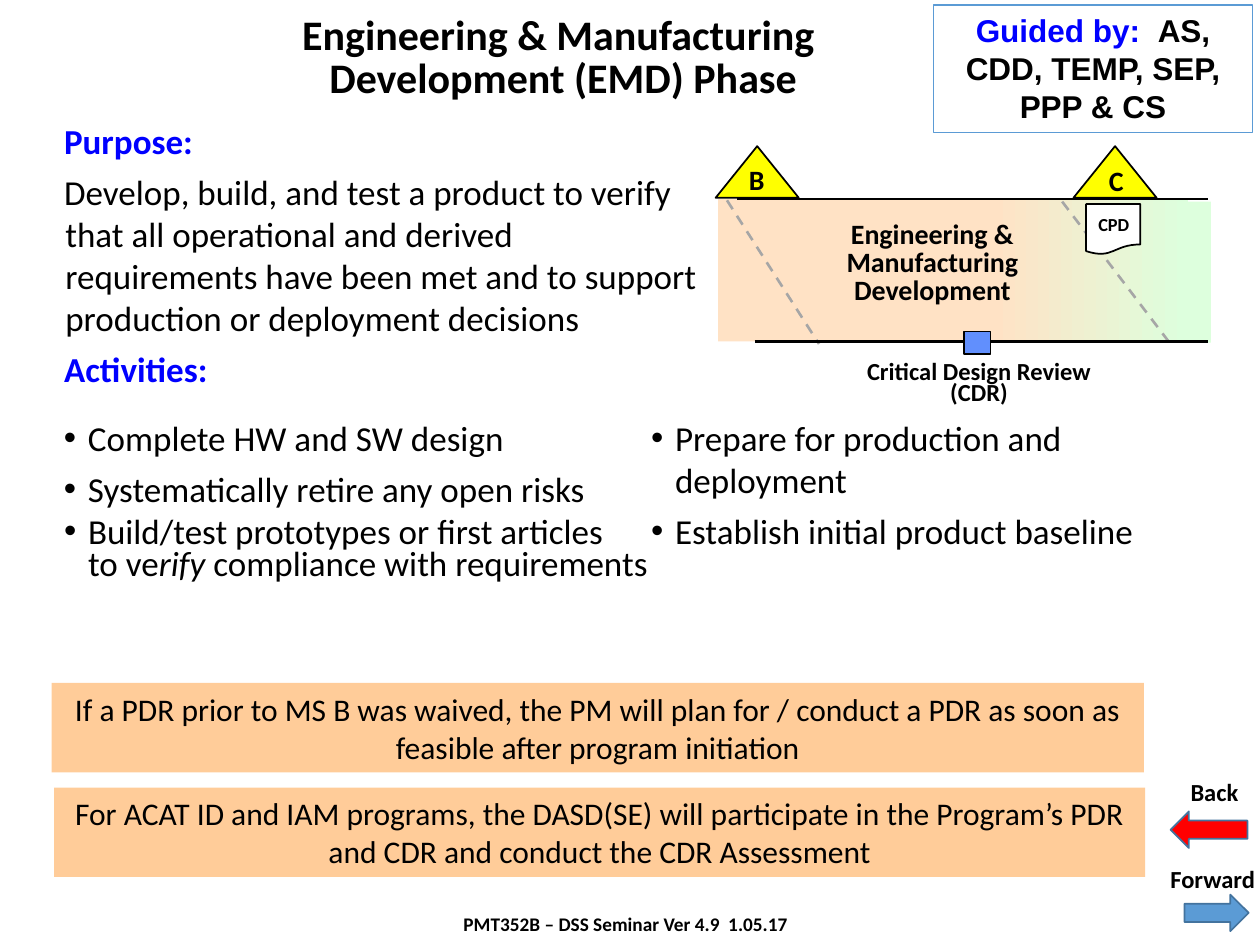
from dataclasses import dataclass
from typing import NamedTuple

from lxml import etree
from pptx import Presentation
from pptx.dml.color import RGBColor
from pptx.enum.dml import MSO_LINE
from pptx.enum.shapes import MSO_CONNECTOR, MSO_SHAPE
from pptx.enum.text import MSO_ANCHOR, MSO_AUTO_SIZE, PP_ALIGN
from pptx.oxml.ns import qn
from pptx.util import Inches, Pt

RECT, TRIANGLE = MSO_SHAPE.RECTANGLE, MSO_SHAPE.ISOSCELES_TRIANGLE
ARROW, DOCUMENT = MSO_SHAPE.RIGHT_ARROW, MSO_SHAPE.FLOWCHART_DOCUMENT
STRAIGHT, DASH = MSO_CONNECTOR.STRAIGHT, MSO_LINE.DASH
LEFT, CENTER = PP_ALIGN.LEFT, PP_ALIGN.CENTER
TOP, MIDDLE = MSO_ANCHOR.TOP, MSO_ANCHOR.MIDDLE
COLS, ROWS = 100, 75  # grid of tenth-inch cells


@dataclass(frozen=True)
class Theme:
    font: str = "Calibri"
    guide_font: str = "Arial"
    black: str = "000000"
    white: str = "FFFFFF"
    heading: str = "0000FF"
    note: str = "FFCC99"
    phase: str = "FFE2C5"
    next_phase: str = "DDFFDD"
    milestone: str = "FFFF00"
    review: str = "618FFD"
    dash: str = "A6A6A6"
    accent: str = "5B9BD5"
    accent_line: str = "43739E"
    back: str = "FF0000"
    title: float = 24
    body: float = 20
    callout: float = 18
    label: float = 16
    small: float = 14
    footer: float = 11
    tiny: float = 10.5


class Box(NamedTuple):
    col: float
    row: float
    cols: float
    rows: float


class Run(NamedTuple):
    text: str
    color: str = "000000"
    bold: bool = False
    italic: bool = False


class Para(NamedTuple):
    runs: list[Run]
    margin: float = 0  # grid columns
    indent: float = 0
    before: float = 0  # points
    spacing: float | None = None  # share of a line, or Pt
    bullet: bool = False


T = Theme()
prs = Presentation()
prs.slide_width, prs.slide_height = Inches(COLS / 10), Inches(ROWS / 10)
s = prs.slides.add_slide(prs.slide_layouts[6])


def grid(*cells: float) -> list[int]:
    return [Inches(c / 10) for c in cells]


def rgb(color: str) -> RGBColor:
    return RGBColor.from_string(color)


def write(sp, paras: list[Para], *, size: float, font: str = T.font, align=CENTER,
          wrap: bool = True, anchor=TOP, inset: bool = True) -> None:
    tf = sp.text_frame
    tf.word_wrap, tf.vertical_anchor = wrap, anchor
    tf.auto_size = MSO_AUTO_SIZE.SHAPE_TO_FIT_TEXT
    if not inset:
        tf.margin_left = tf.margin_right = tf.margin_top = tf.margin_bottom = 0
    for i, para in enumerate(paras):
        p = tf.add_paragraph() if i else tf.paragraphs[0]
        p.alignment, p.space_before = align, Pt(para.before)
        if para.spacing:
            p.line_spacing = para.spacing
        pPr = p._p.get_or_add_pPr()
        margin, indent = grid(para.margin, para.indent)
        pPr.set("marL", str(margin))
        pPr.set("indent", str(indent))
        if para.bullet:
            etree.SubElement(pPr, qn("a:buFont"), typeface="Arial")
            etree.SubElement(pPr, qn("a:buChar"), char="•")
        for run in para.runs:
            r = p.add_run()
            r.text = run.text
            r.font.name, r.font.size = font, Pt(size)
            r.font.bold, r.font.italic = run.bold, run.italic
            r.font.color.rgb = rgb(run.color)


def add_text(box: Box, paras: list[Para], **fmt) -> None:
    write(s.shapes.add_textbox(*grid(*box)), paras, **fmt)


def add_label(box: Box, text: str, size: float, *, spacing=None, **fmt) -> None:
    add_text(box, [Para([Run(text, bold=True)], spacing=spacing)], size=size, **fmt)


def add_shape(kind, box: Box, fill: str | None = None, line: str | None = None,
              width: float = 1, rotation: float = 0):
    sp = s.shapes.add_shape(kind, *grid(*box))
    sp.shadow.inherit = False
    sp.rotation = rotation
    if fill:
        sp.fill.solid()
        sp.fill.fore_color.rgb = rgb(fill)
    else:
        sp.fill.background()
    if line:
        sp.line.color.rgb, sp.line.width = rgb(line), Pt(width)
    else:
        sp.line.fill.background()
    return sp


def add_line(x1: float, y1: float, x2: float, y2: float, color: str, dash=None) -> None:
    ln = s.shapes.add_connector(STRAIGHT, *grid(x1, y1, x2, y2))
    ln.line.color.rgb, ln.line.width = rgb(color), Pt(1.5)
    if dash:
        ln.line.dash_style = dash
    etree.SubElement(ln._element.spPr, qn("a:effectLst"))


def bullet(text: str, before: float = 5, spacing=None) -> Para:
    return Para([Run(text)], 3.1, -1.9, before, spacing, True)


def heading(text: str) -> Para:
    return Para([Run(text, T.heading, True)], 1.3, -0.1, 5)


# Title and purpose
add_text(Box(22.8, 0.8, 43.8, 7.9),
         [Para([Run(t, bold=True)], spacing=0.85)
          for t in ("Engineering & Manufacturing ", "Development (EMD) Phase")],
         size=T.title, wrap=False)
purpose = ("Develop, build, and test a product to verify that all operational and derived "
           "requirements have been met and to support production or deployment decisions")
add_text(Box(2.9, 9, 53.9, 22.9),
         [heading("Purpose:"), Para([Run(purpose)], 1.3, -0.1, 5), heading("Activities:")],
         size=T.body, align=LEFT)

# Activities
verify = [Run("to ve"), Run("rify", italic=True), Run(" compliance with requirements")]
activities = [
    (Box(2.9, 32.6, 46.3, 11.9), [bullet("Complete HW and SW design"),
                                  bullet("Systematically retire any open risks")]),
    (Box(49.5, 32.6, 49.7, 11.9), [bullet("Prepare for production and deployment"),
                                   bullet("Establish initial product baseline")]),
    (Box(2.9, 40.8, 50.5, 6.1), [bullet("Build/test prototypes or first articles", 0, Pt(18)),
                                 Para(verify, 3.1, spacing=Pt(18))]),
]
for box, paras in activities:
    add_text(box, paras, size=T.body, align=LEFT)

# Notes
notes = [
    (Box(4.1, 54.2, 86.7, 7.1), "If a PDR prior to MS B was waived, the PM will plan for / "
                                "conduct a PDR as soon as feasible after program initiation"),
    (Box(4.3, 62.5, 86.6, 7.1), "For ACAT ID and IAM programs, the DASD(SE) will participate in "
                                "the Program’s PDR and CDR and conduct the CDR Assessment"),
]
for box, text in notes:
    write(add_shape(RECT, box, T.note), [Para([Run(text)])], size=T.callout, anchor=MIDDLE)

# Phase band, fading into the next phase
add_shape(RECT, Box(57, 15.8, 24.4, 11.3), T.phase)
add_shape(RECT, Box(78.9, 16, 17.2, 11.2), T.next_phase)
fade = add_shape(RECT, Box(78.7, 15.9, 15.6, 11.3)).fill
fade.gradient()
fade.gradient_angle = 0
for stop, color in zip(fade.gradient_stops, (T.phase, T.next_phase)):
    stop.color.rgb = rgb(color)
add_line(57.7, 15.9, 65, 27.3, T.dash, DASH)
add_line(84.3, 16, 92.9, 27.3, T.dash, DASH)
add_label(Box(63.3, 17.6, 21.4, 7.6), "Engineering & Manufacturing Development", T.label,
          spacing=Pt(16), inset=False)
add_line(59.9, 27.1, 95.9, 27.1, T.black)
add_line(58.5, 15.8, 95.9, 15.8, T.black)

# Milestones, design review and document
for col, letter, box in (56.8, "B", Box(58.4, 12.4, 3.3, 3.7)), (85.2, "C", Box(87, 12.5, 3.2, 3.7)):
    add_shape(TRIANGLE, Box(col, 11.6, 6.6, 4.1), T.milestone, T.black)
    add_label(box, letter, T.label, wrap=False)
add_label(Box(67.3, 28.4, 20.8, 4.4), "Critical Design Review (CDR)", T.small, spacing=Pt(12))
add_shape(RECT, Box(76.5, 26.3, 2.1, 1.8), T.review, T.black, 0.75)
add_shape(DOCUMENT, Box(86.2, 16.2, 4.3, 4), T.white, T.black)
add_label(Box(85.4, 16.4, 6, 3.1), "CPD", T.tiny, wrap=False)

# Guiding documents
guide = [Run("Guided by:  ", T.heading, True), Run("AS, CDD, TEMP, SEP, PPP & CS", bold=True)]
write(add_shape(RECT, Box(74.1, 0.4, 25.3, 10.1), line=T.accent, width=0.75),
      [Para(guide)], size=T.callout, font=T.guide_font)

# Navigation and footer
add_shape(ARROW, Box(92.9, 64.4, 6.1, 2.9), T.back, T.accent_line, rotation=180)
add_shape(ARROW, Box(94, 71, 5.1, 2.9), T.accent, T.accent_line)
for box, text, size in [
    (Box(93.5, 61.2, 5.9, 3.4), "Back", T.small),
    (Box(91.9, 68.1, 8.8, 3.4), "Forward", T.small),
    (Box(35.8, 71.9, 28.1, 2.9), "PMT352B – DSS Seminar Ver 4.9  1.05.17", T.footer),
]:
    add_label(box, text, size, align=LEFT, wrap=False)

prs.save("out.pptx")
